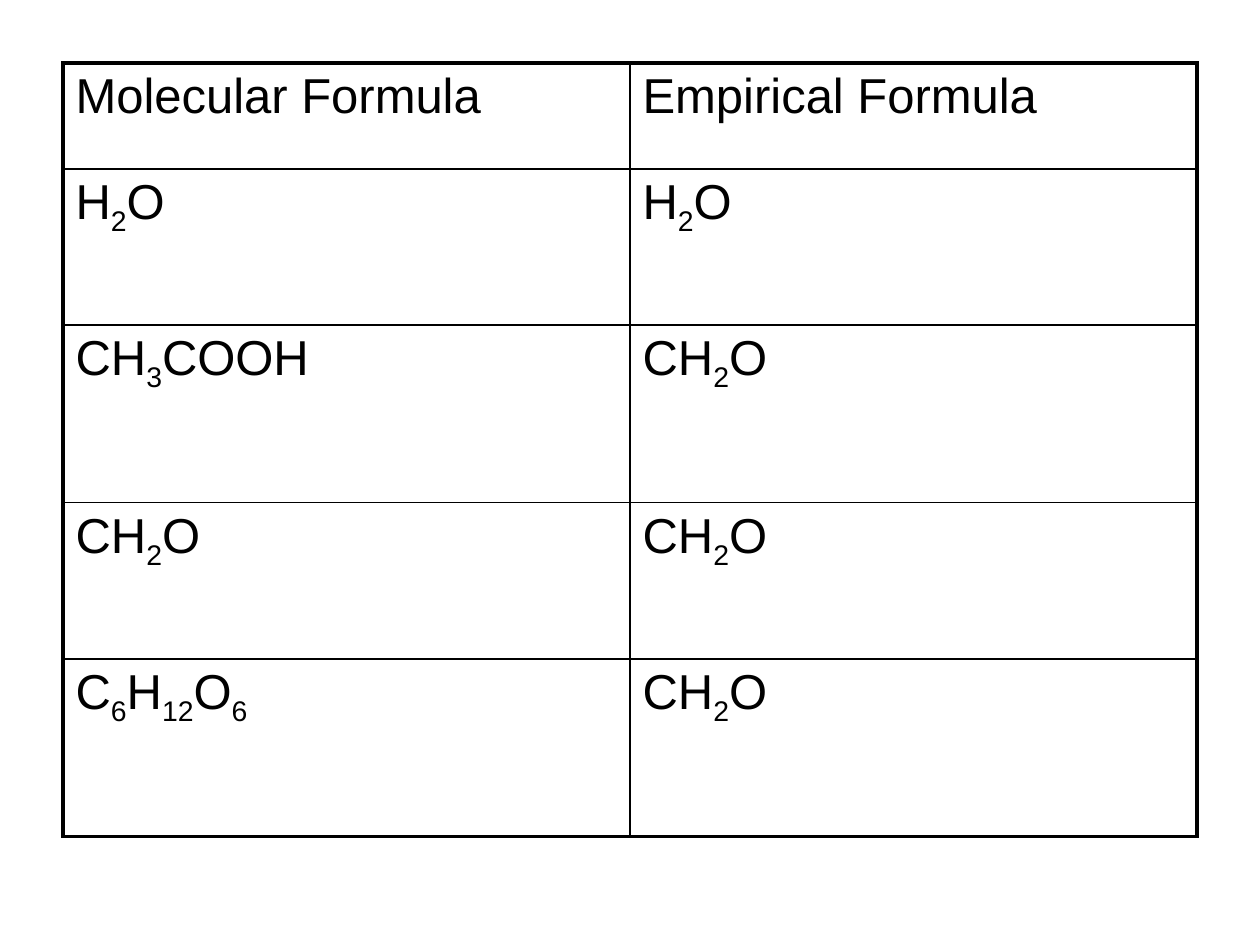
from itertools import groupby
from lxml.etree import SubElement
from pptx import Presentation
from pptx.dml.color import RGBColor
from pptx.oxml.ns import qn
from pptx.util import Inches, Pt

# Content: digits in the formulas are set as subscripts
ROWS = [
    ("Molecular Formula", "Empirical Formula"),
    ("H2O", "H2O"),
    ("CH3COOH", "CH2O"),
    ("CH2O", "CH2O"),
    ("C6H12O6", "CH2O"),
]
HEIGHTS = [0.84, 1.24, 1.41, 1.24, 1.41]
WIDTHS = [4.5, 4.5]
LEFT, TOP = 0.5, 0.5
BLACK = RGBColor(0, 0, 0)
WHITE = RGBColor(255, 255, 255)
THICK, THIN = 2.25, 1


def add_text(cell, text):
    para = cell.text_frame.paragraphs[0]
    for is_sub, chars in groupby(text, str.isdigit):
        run = para.add_run()
        run.text = "".join(chars)
        run.font.name = "Arial"
        run.font.size = Pt(28)
        run.font.color.rgb = BLACK
        if is_sub:
            run.font._element.set("baseline", "-25000")


def add_border(cell, side, width):
    props = cell._tc.get_or_add_tcPr()
    line = SubElement(props, qn(f"a:ln{side}"), w=str(Pt(width)))
    fill = SubElement(line, qn("a:solidFill"))
    SubElement(fill, qn("a:srgbClr"), val=str(BLACK))


# Slide
prs = Presentation()
prs.slide_width, prs.slide_height = Inches(10), Inches(7.5)
slide = prs.slides.add_slide(prs.slide_layouts[6])

# Table
last_row, last_col = len(ROWS) - 1, len(WIDTHS) - 1
table = slide.shapes.add_table(
    len(ROWS), len(WIDTHS), Inches(LEFT), Inches(TOP),
    Inches(sum(WIDTHS)), Inches(sum(HEIGHTS))).table
table.first_row = table.horz_banding = False
for col, width in zip(table.columns, WIDTHS):
    col.width = Inches(width)
for row, height in zip(table.rows, HEIGHTS):
    row.height = Inches(height)

# Cells: thick lines on the outer edge, thin lines inside
for r, texts in enumerate(ROWS):
    for c, text in enumerate(texts):
        cell = table.cell(r, c)
        add_text(cell, text)
        outer = {"L": c == 0, "R": c == last_col,
                 "T": r == 0, "B": r == last_row}
        for side, edge in outer.items():
            add_border(cell, side, THICK if edge else THIN)
        cell.fill.solid()
        cell.fill.fore_color.rgb = WHITE

prs.save("out.pptx")
